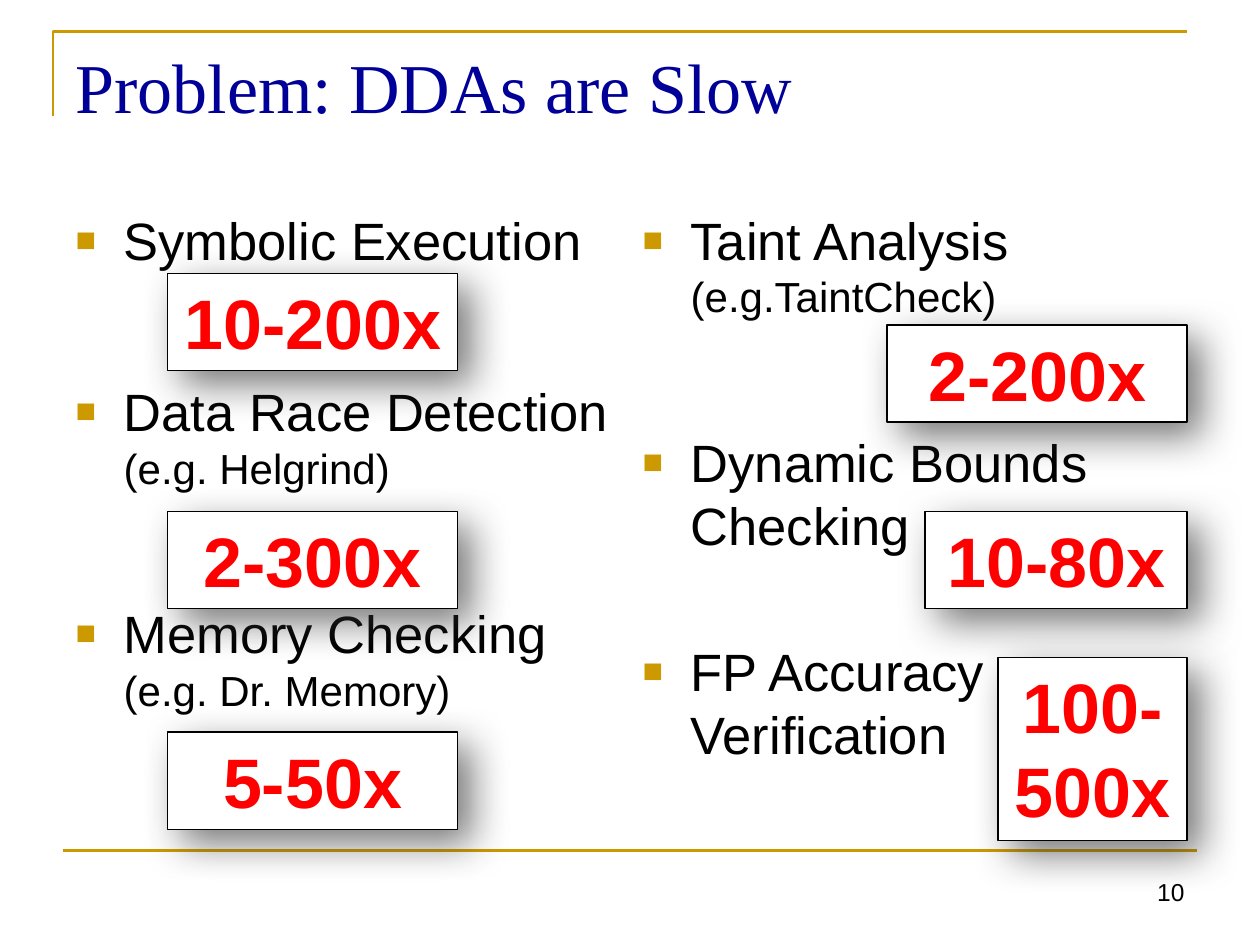
from lxml import etree
from pptx import Presentation
from pptx import util as u
from pptx.dml.color import RGBColor
from pptx.enum import shapes, text
from pptx.oxml import parse_xml
from pptx.oxml.ns import nsdecls, qn

GOLD = RGBColor(0xCC, 0x99, 0x00)
NAVY = RGBColor(0x00, 0x00, 0x99)
RED = RGBColor(0xFF, 0x00, 0x00)
BLACK = RGBColor(0x00, 0x00, 0x00)
WHITE = RGBColor(0xFF, 0xFF, 0xFF)
INDENT = u.Cm(0.97)

LEFT_TOPICS = [
    (0, "Symbolic Execution", None),
    (62, "Data Race Detection", "(e.g. Helgrind)"),
    (62, "Memory Checking", "(e.g. Dr. Memory)"),
]
RIGHT_TOPICS = [
    (0, "Taint Analysis", "(e.g.TaintCheck)"),
    (62, "Dynamic Bounds Checking", None),
    (47.5, "FP Accuracy Verification", None),
]
LEFT_SLOWDOWNS = [(5.51, "10-200x"), (10.31, "2-300x"), (14.76, "5-50x")]
RIGHT_SLOWDOWNS = [
    (6.55, 6.05, 1.96, "2-200x"),
    (10.31, 5.28, 1.96, "10-80x"),
    (13.26, 3.81, 3.68, "100-500x"),
]


def place(sp, x, y, w, h):
    """Move and size a shape in centimetres."""
    sp.left, sp.top, sp.width, sp.height = (u.Cm(v) for v in (x, y, w, h))


def setup_frame(sp, anchor):
    """Give a shape wrapped, unscaled text and return its frame."""
    tf = sp.text_frame
    tf.word_wrap = True
    tf.auto_size = text.MSO_AUTO_SIZE.NONE
    tf.vertical_anchor = anchor
    return tf


def add_run(p, words, size, color=BLACK, font="Arial", bold=False):
    """Append one formatted run to a paragraph."""
    r = p.add_run()
    r.text = words
    r.font.name, r.font.size, r.font.bold = font, u.Pt(size), bold
    r.font.color.rgb = color


def add_bullet(p):
    """Give a paragraph a small gold square with a hanging indent."""
    pPr = p._p.get_or_add_pPr()
    pPr.set("marL", str(INDENT))
    pPr.set("indent", str(-INDENT))
    color = etree.SubElement(pPr, qn("a:buClr"))
    etree.SubElement(color, qn("a:srgbClr"), val=str(GOLD))
    etree.SubElement(pPr, qn("a:buSzPct"), val="65000")
    etree.SubElement(pPr, qn("a:buFont"), typeface="Arial")
    etree.SubElement(pPr, qn("a:buChar"), char="■")


def add_frame_lines(s, x, y, w):
    """Draw the corner above the title and the rule above the footer."""
    left, top = u.Cm(x), u.Cm(y)
    fb = s.shapes.build_freeform(left, top + u.Cm(1.7))
    fb.add_line_segments([(left, top), (left + u.Cm(w), top)], close=False)
    corner = fb.convert_to_shape()
    corner.shadow.inherit = False
    corner.fill.background()
    rule_y = u.Cm(y + 16.51)
    rule = s.shapes.add_connector(
        shapes.MSO_CONNECTOR.STRAIGHT,
        u.Cm(x + 0.2), rule_y, u.Cm(x + 0.2 + w), rule_y)
    etree.SubElement(rule._element.spPr, qn("a:effectLst"))
    for sp in (corner, rule):
        sp.line.color.rgb = GOLD
        sp.line.width = u.Pt(1.5)


def fill_title(s, x, y, w, h):
    """Place and write the title."""
    sp = s.shapes.title
    place(sp, x, y, w, h)
    p = setup_frame(sp, text.MSO_ANCHOR.TOP).paragraphs[0]
    p.alignment = text.PP_ALIGN.LEFT
    add_run(p, "Problem: DDAs are Slow", 40, NAVY, "Times New Roman")


def fill_topics(sp, topics, x, y, w, h):
    """Place one column and list its topics with optional examples."""
    place(sp, x, y, w, h)
    tf = setup_frame(sp, text.MSO_ANCHOR.TOP)
    for i, (gap, topic, example) in enumerate(topics):
        p = tf.add_paragraph() if i else tf.paragraphs[0]
        add_bullet(p)
        p.space_before = u.Pt(gap)
        add_run(p, topic, 30)
        if example:
            p.add_line_break()
            add_run(p, example, 24)


def add_slowdown(s, words, x, y, w, h):
    """Add a white box with a soft shadow and a red slowdown figure."""
    sp = s.shapes.add_shape(
        shapes.MSO_SHAPE.RECTANGLE, u.Cm(x), u.Cm(y), u.Cm(w), u.Cm(h))
    sp.fill.solid()
    sp.fill.fore_color.rgb = WHITE
    sp.line.color.rgb = BLACK
    sp.line.width = u.Pt(0.75)
    sp._element.spPr.append(parse_xml(
        f'<a:effectLst {nsdecls("a")}><a:outerShdw blurRad="{u.Pt(23)}" '
        f'dist="{u.Pt(11)}" dir="2700000" algn="tl" rotWithShape="0">'
        '<a:srgbClr val="333333"><a:alpha val="65000"/></a:srgbClr>'
        '</a:outerShdw></a:effectLst>'))
    p = setup_frame(sp, text.MSO_ANCHOR.TOP).paragraphs[0]
    p.alignment = text.PP_ALIGN.CENTER
    add_run(p, words, 40, RED, bold=True)


def add_page_number(s, x, y, w, h):
    """Write the page number at the lower right."""
    sp = s.shapes.add_textbox(u.Cm(x), u.Cm(y), u.Cm(w), u.Cm(h))
    p = setup_frame(sp, text.MSO_ANCHOR.TOP).paragraphs[0]
    p.alignment = text.PP_ALIGN.RIGHT
    add_run(p, "10", 14)


def main():
    """Build the slide and save it."""
    prs = Presentation()
    prs.slide_width, prs.slide_height = u.Cm(25.4), u.Cm(19.05)
    s = prs.slides.add_slide(prs.slide_layouts[3])
    add_frame_lines(s, 1.07, 0.64, 22.86)
    fill_title(s, 1.27, 0.76, 22.86, 1.78)
    fill_topics(s.placeholders[1], LEFT_TOPICS, 1.27, 4.06, 11.43, 12.98)
    fill_topics(s.placeholders[2], RIGHT_TOPICS, 12.7, 4.06, 11.23, 12.98)
    add_page_number(s, 18.21, 17.55, 5.92, 1.3)
    for y, words in LEFT_SLOWDOWNS:
        add_slowdown(s, words, 3.38, y, 5.84, 1.96)
    for y, w, h, words in RIGHT_SLOWDOWNS:
        add_slowdown(s, words, 23.93 - w, y, w, h)
    prs.save("out.pptx")


if __name__ == "__main__":
    main()
